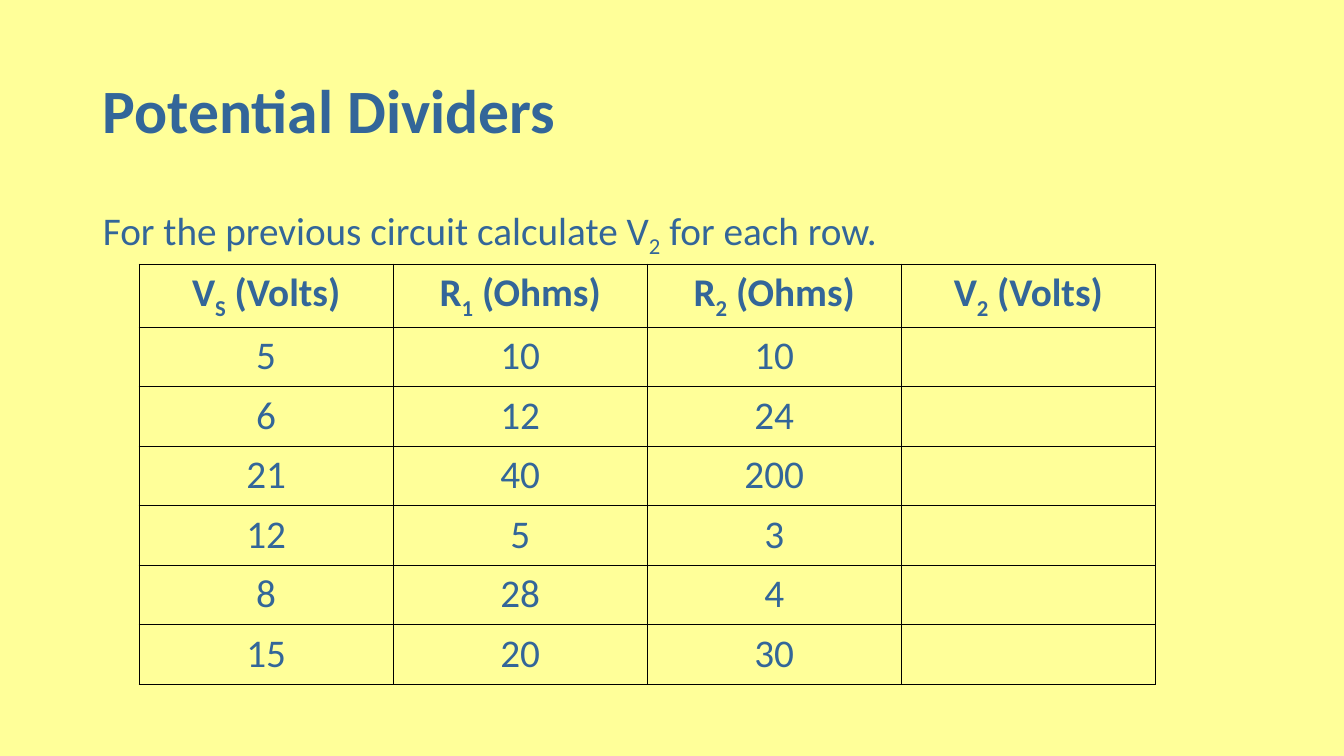
from dataclasses import dataclass

from lxml.etree import SubElement
from pptx import Presentation
from pptx.dml.color import RGBColor
from pptx.enum.text import MSO_ANCHOR, MSO_AUTO_SIZE, PP_ALIGN
from pptx.oxml.ns import qn
from pptx.util import Inches, Pt

BACKGROUND = RGBColor(0xFF, 0xFF, 0x99)
TEXT_BLUE = RGBColor(0x33, 0x66, 0x99)
BORDER_BLACK = RGBColor(0x00, 0x00, 0x00)
FONT = "Calibri"
TEXT_SIZE = 28


@dataclass
class Phrase:
    """Text with a subscript in the middle."""
    before: str
    subscript: str = ""
    after: str = ""


QUESTION = Phrase("For the previous circuit calculate V", "2", " for each row.")
HEADINGS = [
    Phrase("V", "S", " (Volts)"),
    Phrase("R", "1", " (Ohms)"),
    Phrase("R", "2", " (Ohms)"),
    Phrase("V", "2", " (Volts)"),
]
# Supply voltage, first resistor, second resistor
CIRCUITS = [(5, 10, 10), (6, 12, 24), (21, 40, 200), (12, 5, 3), (8, 28, 4), (15, 20, 30)]


def write_phrase(para, phrase: Phrase, size: int = TEXT_SIZE, bold: bool = False) -> None:
    for text in (phrase.before, phrase.subscript, phrase.after):
        if not text:
            continue
        span = para.add_run()
        span.text = text
        span.font.name = FONT
        span.font.size = Pt(size)
        span.font.bold = bold
        span.font.color.rgb = TEXT_BLUE
        if text is phrase.subscript:
            span.font._element.set("baseline", "-25000")


def place(box, left: float, top: float, width: float, height: float) -> None:
    box.left, box.top = Inches(left), Inches(top)
    box.width, box.height = Inches(width), Inches(height)
    box.text_frame.auto_size = MSO_AUTO_SIZE.NONE
    box.text_frame.word_wrap = True


def format_cell(cell) -> None:
    properties = cell._tc.get_or_add_tcPr()
    for side in ("a:lnL", "a:lnR", "a:lnT", "a:lnB"):
        line = SubElement(properties, qn(side), w=str(Pt(1)))
        fill = SubElement(line, qn("a:solidFill"))
        SubElement(fill, qn("a:srgbClr"), val=str(BORDER_BLACK))
    cell.fill.background()


def fill_cell(cell, phrase: Phrase, bold: bool) -> None:
    para = cell.text_frame.paragraphs[0]
    para.alignment = PP_ALIGN.CENTER
    write_phrase(para, phrase, bold=bold)


def add_circuit_table(page) -> None:
    rows = [HEADINGS] + [[Phrase(str(value)) for value in circuit] for circuit in CIRCUITS]
    frame = page.shapes.add_table(len(rows), len(HEADINGS), Inches(1.38), Inches(2.62),
                                  Inches(10.08), Inches(4.13))
    table = frame.table
    table.first_row = False
    table.horz_banding = False
    for column in table.columns:
        column.width = Inches(2.52)
    for row in table.rows:
        row.height = Inches(0.59)
    for cell in table.iter_cells():
        format_cell(cell)
    for row_index, phrases in enumerate(rows):
        for column_index, phrase in enumerate(phrases):
            fill_cell(table.cell(row_index, column_index), phrase, bold=row_index == 0)


def main() -> None:
    deck = Presentation()
    deck.slide_width, deck.slide_height = Inches(13.33), Inches(7.5)
    page = deck.slides.add_slide(deck.slide_layouts[1])
    page.background.fill.solid()
    page.background.fill.fore_color.rgb = BACKGROUND

    # Title
    title = page.shapes.title
    place(title, 0.92, 0.4, 11.5, 1.45)
    title.text_frame.vertical_anchor = MSO_ANCHOR.MIDDLE
    para = title.text_frame.paragraphs[0]
    para.alignment = PP_ALIGN.LEFT
    para.line_spacing = 0.9
    write_phrase(para, Phrase("Potential Dividers"), size=44, bold=True)

    # Question, without a bullet
    body = page.placeholders[1]
    place(body, 0.92, 2, 11.5, 4.76)
    para = body.text_frame.paragraphs[0]
    para.line_spacing = 0.9
    para.space_before = Pt(10)
    properties = para._p.get_or_add_pPr()
    properties.set("marL", "0")
    properties.set("indent", "0")
    SubElement(properties, qn("a:buNone"))
    write_phrase(para, QUESTION)

    # Table of circuits
    add_circuit_table(page)

    deck.save("out.pptx")


if __name__ == "__main__":
    main()
